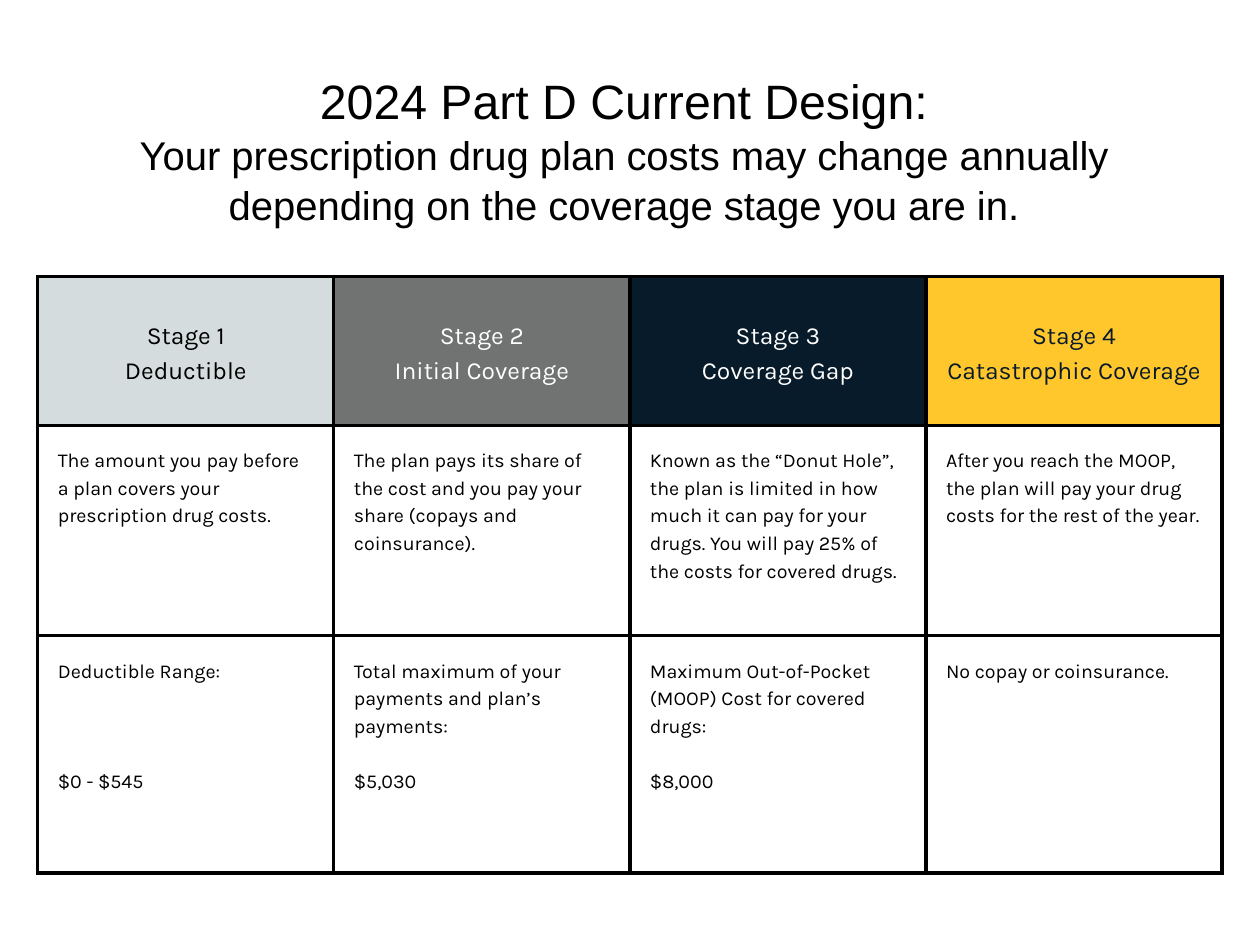
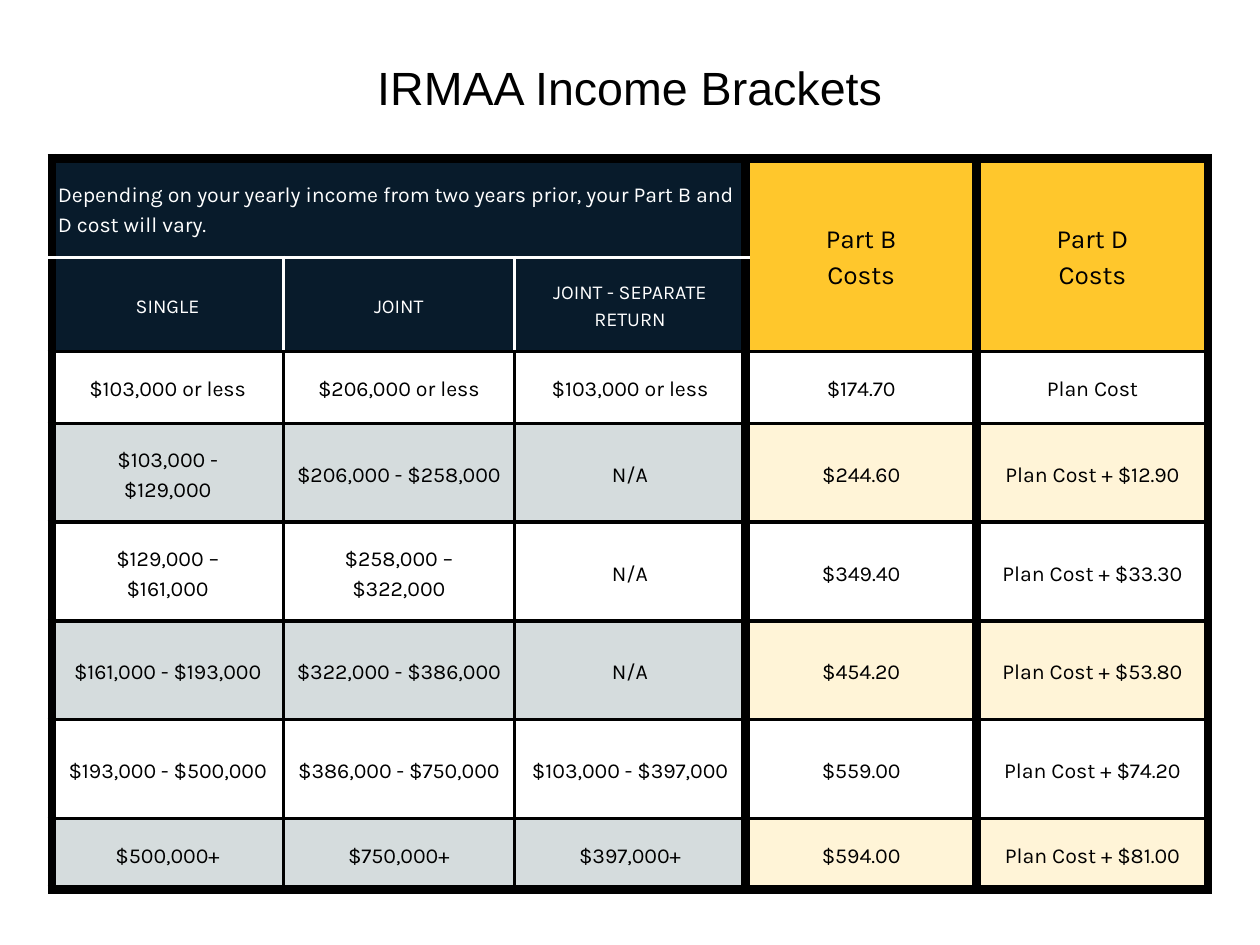
import lxml.etree
import pptx
import pptx.dml.color
import pptx.enum.text
import pptx.oxml.ns
import pptx.util

RGB = pptx.dml.color.RGBColor
ALIGN = pptx.enum.text.PP_ALIGN
ANCHOR = pptx.enum.text.MSO_ANCHOR
BLACK = RGB(0x00, 0x00, 0x00)
WHITE = RGB(0xFF, 0xFF, 0xFF)
MIST = RGB(0xD5, 0xDC, 0xDD)
GRAY = RGB(0x70, 0x73, 0x72)
NAVY = RGB(0x08, 0x1B, 0x2B)
GOLD = RGB(0xFF, 0xC7, 0x2C)
CREAM = RGB(0xFF, 0xF4, 0xD7)

WIDE = pptx.util.Inches(10.67)
TALL = pptx.util.Inches(8)
HEAD_FONT, HEAD_LEAD = "Arial", 1.25
BODY_FONT, BODY_LEAD = "Karla", 1.4
THIN = (BLACK, 2.25)
THICK = (BLACK, 6)
LIGHT = (WHITE, 2.25)

STAGES = [
    ("Stage 1\nDeductible", MIST, BLACK),
    ("Stage 2\nInitial Coverage", GRAY, WHITE),
    ("Stage 3\nCoverage Gap", NAVY, WHITE),
    ("Stage 4\nCatastrophic Coverage", GOLD, NAVY),
]
NOTES = [
    "The amount you pay before a plan covers your prescription drug costs.",
    "The plan pays its share of the cost and you pay your share (copays and coinsurance).",
    "Known as the “Donut Hole”, the plan is limited in how much it can pay for your drugs. "
    "You will pay 25% of the costs for covered drugs.",
    "After you reach the MOOP, the plan will pay your drug costs for the rest of the year.",
]
LIMITS = [
    ("Deductible Range:\n$0 - $545", 3),
    ("Total maximum of your payments and plan’s payments:\n$5,030", 1),
    ("Maximum Out-of-Pocket (MOOP) Cost for covered drugs:\n$8,000", 1),
    ("No copay or coinsurance.", 0),
]
INTRO = "Depending on your yearly income from two years prior, your Part B and D cost will vary."
FILERS = ["SINGLE", "JOINT", "JOINT - SEPARATE RETURN"]
COSTS = ["Part B\nCosts", "Part D\nCosts"]
BANDS = [
    ("$103,000 or less", "$206,000 or less", "$103,000 or less", "$174.70", "Plan Cost"),
    ("$103,000 -\n$129,000", "$206,000 - $258,000", "N/A", "$244.60", "Plan Cost + $12.90"),
    ("$129,000 –\n$161,000", "$258,000 –\n$322,000", "N/A", "$349.40", "Plan Cost + $33.30"),
    ("$161,000 - $193,000", "$322,000 - $386,000", "N/A", "$454.20", "Plan Cost + $53.80"),
    ("$193,000 - $500,000", "$386,000 - $750,000", "$103,000 - $397,000", "$559.00",
     "Plan Cost + $74.20"),
    ("$500,000+", "$750,000+", "$397,000+", "$594.00", "Plan Cost + $81.00"),
]


def scale(left, top, width, height):
    """Turn percentages of the slide into lengths."""
    return [int(part * full / 100)
            for part, full in zip((left, top, width, height), (WIDE, TALL, WIDE, TALL))]


def write(frame, lines, font, lead, color, align, gap=0):
    """Write (text, size) lines as paragraphs, with gap blank lines between them."""
    for index, (text, size) in enumerate(lines):
        para = frame.add_paragraph() if index else frame.paragraphs[0]
        para.alignment = align
        para.line_spacing = pptx.util.Pt(size * lead)
        para.space_before = pptx.util.Pt(gap * size * lead if index else 0)
        run = para.add_run()
        run.text = text
        run.font.name = font
        run.font.size = pptx.util.Pt(size)
        run.font.color.rgb = color


def add_title(slide, box, lines):
    """Move the title to the box and write its lines."""
    title = slide.shapes.title
    title.left, title.top, title.width, title.height = scale(*box)
    frame = title.text_frame
    frame.margin_left = frame.margin_right = frame.margin_top = frame.margin_bottom = 0
    frame.vertical_anchor = ANCHOR.TOP
    frame.word_wrap = True
    frame.auto_size = pptx.enum.text.MSO_AUTO_SIZE.SHAPE_TO_FIT_TEXT
    write(frame, lines, HEAD_FONT, HEAD_LEAD, BLACK, ALIGN.CENTER)


def add_grid(slide, box, count, ratios):
    """Add a plain table with equal columns and rows in the given ratios."""
    left, top, width, height = scale(*box)
    table = slide.shapes.add_table(len(ratios), count, left, top, width, height).table
    table.first_row = table.horz_banding = False
    for column in table.columns:
        column.width = width // count
    for row, ratio in zip(table.rows, ratios):
        row.height = int(height * ratio / sum(ratios))
    return table


def add_edge(cell, side, line):
    """Draw one side of a cell, or leave it bare when there is no line."""
    qn = pptx.oxml.ns.qn
    edge = lxml.etree.SubElement(cell._tc.get_or_add_tcPr(), qn("a:ln" + side))
    if line is None:
        lxml.etree.SubElement(edge, qn("a:noFill"))
        return
    color, width = line
    edge.set("w", str(pptx.util.Pt(width)))
    solid = lxml.etree.SubElement(edge, qn("a:solidFill"))
    lxml.etree.SubElement(solid, qn("a:srgbClr")).set("val", str(color))


def dress(cell, edges, fill, inset, anchor):
    """Set the sides, fill, margins and anchor of a cell."""
    for side, line in zip("LRTB", edges):
        add_edge(cell, side, line)
    if fill is None:
        cell.fill.background()
    else:
        cell.fill.solid()
        cell.fill.fore_color.rgb = fill
    space = pptx.util.Inches(inset)
    cell.margin_left = cell.margin_right = cell.margin_top = cell.margin_bottom = space
    cell.vertical_anchor = anchor


def put(cell, text, size, color=BLACK, align=ALIGN.CENTER, gap=0):
    """Write body text in a cell, one paragraph to a line."""
    lines = [(line, size) for line in text.split("\n")]
    write(cell.text_frame, lines, BODY_FONT, BODY_LEAD, color, align, gap)


def add_stages(slide, box):
    """Place the table of coverage stages."""
    table = add_grid(slide, box, len(STAGES), (1.26, 1.78, 2.01))
    for col, ((name, fill, ink), note, (limit, gap)) in enumerate(zip(STAGES, NOTES, LIMITS)):
        head, body, foot = (table.cell(row, col) for row in range(3))
        dress(head, [THIN] * 4, fill, 0.17, ANCHOR.MIDDLE)
        put(head, name, 15, ink)
        for cell, text, space in ((body, note, 0), (foot, limit, gap)):
            dress(cell, [THIN] * 4, None, 0.17, ANCHOR.TOP)
            put(cell, text, 12, align=ALIGN.LEFT, gap=space)


def post(row, edge):
    """Give the upright line at a column edge."""
    if edge in (0, 3, 4, 5):
        return THICK
    return (None, LIGHT)[row] if row < 2 else THIN


def rail(edge, col, last):
    """Give the level line at a row edge."""
    if edge in (0, last):
        return THICK
    if edge == 1:
        return LIGHT if col < 3 else None
    return THIN


def shade(row, col):
    """Give the fill of a bracket cell."""
    if row < 2:
        return NAVY if col < 3 else GOLD
    if row % 2 == 0:
        return None
    return MIST if col < 3 else CREAM


def add_bands(slide, box):
    """Place the table of income brackets."""
    ratios = (0.84, 0.8, 0.61, 0.84, 0.84, 0.84, 0.84, 0.6)
    last = len(ratios)
    table = add_grid(slide, box, 5, ratios)
    table.cell(0, 0).merge(table.cell(0, 2))
    for col in (3, 4):
        table.cell(0, col).merge(table.cell(1, col))
    for row in range(last):
        for col in range(5):
            cell = table.cell(row, col)
            edges = (post(row, col), post(row, col + cell.span_width),
                     rail(row, col, last), rail(row + cell.span_height, col, last))
            dress(cell, edges, shade(row, col), 0.05, ANCHOR.MIDDLE)
    put(table.cell(0, 0), INTRO, 13, WHITE, ALIGN.LEFT)
    for col, text in enumerate(COSTS, 3):
        put(table.cell(0, col), text, 16)
    for col, text in enumerate(FILERS):
        put(table.cell(1, col), text, 12, WHITE)
    for row, band in enumerate(BANDS, 2):
        for col, text in enumerate(band):
            put(table.cell(row, col), text, 13)


def main():
    """Build both slides and save them."""
    deck = pptx.Presentation()
    deck.slide_width, deck.slide_height = WIDE, TALL
    plain = deck.slide_layouts[5]

    slide = deck.slides.add_slide(plain)
    add_stages(slide, (3, 29.25, 94, 63.13))
    add_title(slide, (7.97, 7.25, 83.13, 17.5), [
        ("2024 Part D Current Design:", 29.4),
        ("Your prescription drug plan costs may change annually "
         "depending on the coverage stage you are in.", 24.4),
    ])

    slide = deck.slides.add_slide(plain)
    add_bands(slide, (4.12, 16.75, 91.75, 77.38))
    add_title(slide, (18.74, 6, 62.51, 6.13), [("IRMAA Income Brackets", 28.4)])
    deck.save("out.pptx")


if __name__ == "__main__":
    main()
